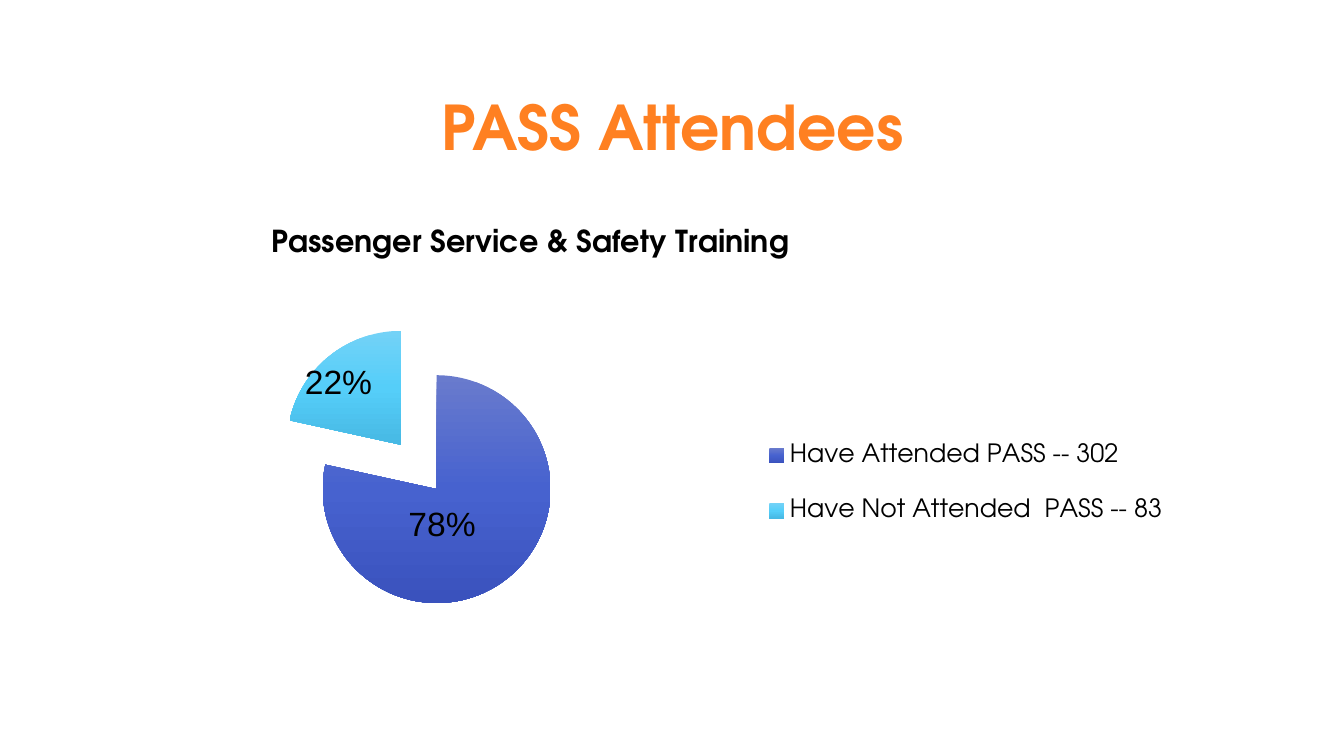
from lxml import etree
from pptx import Presentation, util as u
from pptx.chart.data import CategoryChartData
from pptx.dml.color import RGBColor
from pptx.enum import chart as charts, text
from pptx.oxml import parse_xml
from pptx.oxml.ns import nsdecls, qn

WIDTH, HEIGHT = 13.33, 7.5
FONT = "TeX Gyre Adventor"
COLOURS = {"title": "FF8021", "text": "000000"}
GRADIENTS = [("697BCD", "4762CF", "3A52BD"), ("73D2F7", "55CEF9", "47B9E4")]
TRAINING = "Passenger Service & Safety Training"
ATTENDANCE = {"Have Attended PASS -- 302": 302, "Have Not Attended  PASS -- 83": 83}
LABEL_SHIFTS = [{"x": -0.026, "y": -0.018}, {"x": -0.023, "y": -0.035}]
EXPLOSION = 25


def set_font(font, colour="text", **values):
    """Apply format values and a named colour to a font."""
    for name, value in values.items():
        setattr(font, name, value)
    font.color.rgb = RGBColor.from_string(COLOURS[colour])


def set_layout(element, index, edge=True, **shares):
    """Place a chart part by shares of the chart's size."""
    for layout in element.findall(qn("c:layout")):
        element.remove(layout)
    layout = etree.Element(qn("c:layout"))
    manual = etree.SubElement(layout, qn("c:manualLayout"))
    settings = {"xMode": "edge", "yMode": "edge"} if edge else {}
    if element.tag == qn("c:plotArea"):
        settings = {"layoutTarget": "inner", **settings}
    for name, value in {**settings, **shares}.items():
        etree.SubElement(manual, qn(f"c:{name}")).set("val", str(value))
    element.insert(index, layout)


def explode_before(element):
    """Add the pull-out distance ahead of a chart element."""
    element.addprevious(etree.Element(qn("c:explosion"), val=str(EXPLOSION)))


def gradient_fill(colours):
    """Return a vertical gradient through the given colours."""
    stops = "".join(
        f'<a:gs pos="{position}"><a:srgbClr val="{colour}"/></a:gs>'
        for position, colour in zip((0, 50000, 100000), colours)
    )
    return parse_xml(
        f'<a:gradFill {nsdecls("a")} rotWithShape="1"><a:gsLst>{stops}</a:gsLst>'
        '<a:lin ang="5400000" scaled="0"/></a:gradFill>'
    )


def add_title(slide, left, top, width, height):
    """Write the slide title in its box."""
    shape = slide.shapes.add_textbox(left, top, width, height)
    frame = shape.text_frame
    frame.word_wrap = True
    frame.vertical_anchor = text.MSO_ANCHOR.MIDDLE
    paragraph = frame.paragraphs[0]
    paragraph.text = "PASS Attendees"
    paragraph.alignment = text.PP_ALIGN.CENTER
    paragraph.line_spacing = 0.9
    set_font(paragraph.runs[0].font, "title", name=FONT, size=u.Pt(44), bold=True)


def style_slice(point, colours, share, shift):
    """Fill, pull out and label one slice of the pie."""
    point.format.line.fill.background()
    properties = point.format.line._get_or_add_ln().getparent()
    properties.insert(0, gradient_fill(colours))
    explode_before(properties)
    label = point.data_label
    paragraph = label.text_frame.paragraphs[0]
    paragraph.text = f"{share:.0%}"
    set_font(paragraph.runs[0].font, name="Arial", size=u.Pt(24), bold=False)
    label.position = charts.XL_LABEL_POSITION.CENTER
    label._dLbl.find(qn("c:showPercent")).set("val", "1")
    set_layout(label._dLbl, 1, edge=False, **shift)


def add_attendance_chart(slide, left, top, width, height):
    """Draw the attendance pie with its heading and legend."""
    data = CategoryChartData()
    data.categories = list(ATTENDANCE)
    data.add_series(TRAINING, list(ATTENDANCE.values()))
    chart = slide.shapes.add_chart(
        charts.XL_CHART_TYPE.PIE, left, top, width, height, data
    ).chart
    set_font(chart.font, name=FONT, size=u.Pt(18))

    chart.has_title = True
    paragraph = chart.chart_title.text_frame.paragraphs[0]
    paragraph.text = TRAINING
    set_font(paragraph.runs[0].font, name=FONT, size=u.Pt(21.6), bold=True)
    set_layout(chart.chart_title._element, 1, x=0.188, y=0.058)

    chart.has_legend = True
    chart.legend.position = charts.XL_LEGEND_POSITION.RIGHT
    chart.legend.include_in_layout = False
    set_font(chart.legend.font, name=FONT, size=u.Pt(18))
    set_layout(chart.legend._element, 1, x=0.61, y=0.45, w=0.36, h=0.29)

    plot = chart.plots[0]
    plot.vary_by_categories = True
    set_layout(plot._element.getparent(), 0, x=0.197, y=0.27, w=0.245, h=0.583)
    series = plot.series[0]
    total = sum(ATTENDANCE.values())
    slices = zip(ATTENDANCE.values(), GRADIENTS, LABEL_SHIFTS)
    for index, (value, colours, shift) in enumerate(slices):
        style_slice(series.points[index], colours, value / total, shift)
    explode_before(series._element.find(qn("c:dPt")))
    for name in ("show_value", "show_percentage"):
        setattr(series.data_labels, name, True)


def main():
    """Build and save the presentation."""
    presentation = Presentation()
    presentation.slide_width = u.Inches(WIDTH)
    presentation.slide_height = u.Inches(HEIGHT)
    slide = presentation.slides.add_slide(presentation.slide_layouts[6])
    add_title(slide, *map(u.Inches, (0.92, 0.75, 11.5, 1.1)))
    add_attendance_chart(slide, *map(u.Inches, (0.47, 1.91, 11.53, 4.85)))
    presentation.save("out.pptx")


if __name__ == "__main__":
    main()
